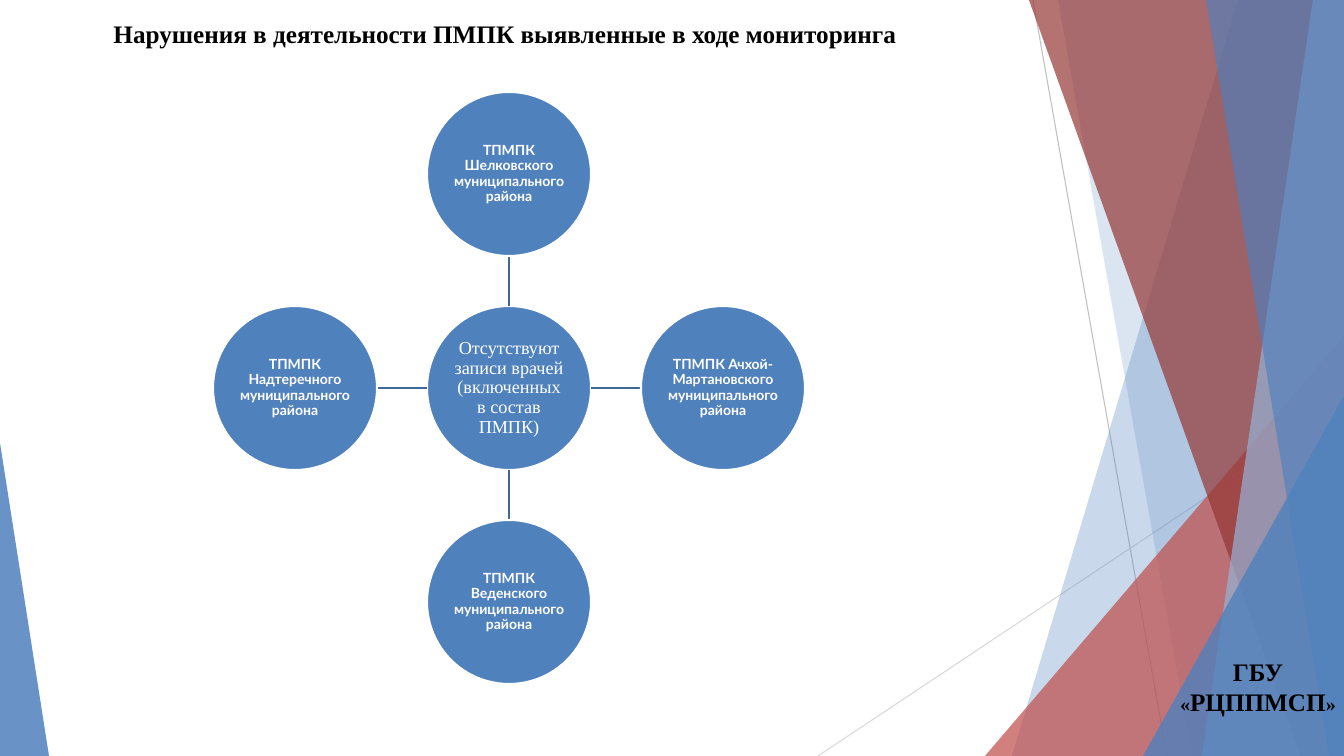
"""Build a slide with a hub of four districts around one monitoring finding."""
from lxml.etree import SubElement
from pptx import Presentation
from pptx.dml.color import RGBColor
from pptx.enum.shapes import MSO_CONNECTOR, MSO_SHAPE
from pptx.enum.text import MSO_ANCHOR, MSO_AUTO_SIZE, PP_ALIGN
from pptx.oxml.ns import qn
from pptx.util import Pt

TITLE = "Нарушения в деятельности ПМПК выявленные в ходе мониторинга"
CENTRE_NAME = "ГБУ «РЦППМСП»"
FINDING = "Отсутствуют записи врачей (включенных в состав ПМПК)"
DISTRICTS = [
    ("ТПМПК Шелковского муниципального района", (0, -1)),
    ("ТПМПК Ачхой-Мартановского муниципального района", (1, 0)),
    ("ТПМПК Веденского муниципального района", (0, 1)),
    ("ТПМПК Надтеречного муниципального района", (-1, 0)),
]
COLOURS = {
    "blue": "4F81BD", "pale blue": "95B3D7", "red": "C0504D", "dark red": "953735",
    "spoke": "3F6797", "grey": "BFBFBF", "light grey": "D9D9D9",
    "white": "FFFFFF", "black": "000000",
}
THIN_LINES = [
    ((1033, 0), (1167, 756), "grey"),
    ((1344, 406), (818, 756), "light grey"),
]
# Bands hold top and bottom x; triangles hold left, top, width and apex.
DECORATION = [
    ("band", (1238, 1012), "blue", 30),
    ("band", (1058, 1192), "blue", 20),
    ("triangle", (985, 336, 359, 1), "red", 72),
    ("band", (1029, 1301), "dark red", 70),
    ("band", (1313, 1202), "pale blue", 70),
    ("band", (1206, 1329), "blue", 65),
    ("triangle", (1143, 396, 201, 1), "blue", 80),
    ("triangle", (0, 443, 49, 0), "blue", 85),
]
WIDTH, HEIGHT = 1344, 756
HUB_X, HUB_Y, RADIUS, SPACING = 509, 388, 82, 214
SERIF, SANS = "Times New Roman", "Lato"
SCALE = 914400 / 100.8


def px(length):
    return round(length * SCALE)


def colour(name):
    return RGBColor.from_string(COLOURS[name])


def place(shape, left, top, width, height):
    shape.left, shape.top = px(left), px(top)
    shape.width, shape.height = px(width), px(height)


def write(shape, text, size, font, ink, bold, anchor, spacing, inset=0):
    frame = shape.text_frame
    frame.text = text
    frame.word_wrap = True
    frame.auto_size = MSO_AUTO_SIZE.NONE
    frame.vertical_anchor = anchor
    frame.margin_left = frame.margin_right = px(inset)
    frame.margin_top = frame.margin_bottom = px(inset)
    paragraph = frame.paragraphs[0]
    paragraph.alignment = PP_ALIGN.CENTER
    paragraph.line_spacing = spacing
    run = paragraph.runs[0]
    run.font.size, run.font.name, run.font.bold = Pt(size), font, bold
    run.font.color.rgb = colour(ink)
    return run


def add_line(shapes, start, end, ink, weight):
    points = [px(value) for value in (*start, *end)]
    line = shapes.add_connector(MSO_CONNECTOR.STRAIGHT, *points)
    line.line.color.rgb = colour(ink)
    line.line.width = Pt(weight)
    SubElement(line._element.spPr, qn("a:effectLst"))


def add_decoration(shapes, kind, geometry, fill, opacity):
    if kind == "band":
        top_x, bottom_x = geometry
        builder = shapes.build_freeform(top_x, 0, scale=SCALE)
        builder.add_line_segments([(WIDTH, 0), (WIDTH, HEIGHT), (bottom_x, HEIGHT)])
        shape = builder.convert_to_shape()
    else:
        left, top, width, apex = geometry
        shape = shapes.add_shape(MSO_SHAPE.ISOSCELES_TRIANGLE, 0, 0, 0, 0)
        place(shape, left, top, width, HEIGHT - top)
        shape.adjustments[0] = apex
    shape.shadow.inherit = False
    shape.line.fill.background()
    shape.fill.solid()
    shape.fill.fore_color.rgb = colour(fill)
    tint = shape._element.spPr.find(".//" + qn("a:srgbClr"))
    SubElement(tint, qn("a:alpha")).set("val", str(opacity * 1000))


def add_circle(shapes, x, y, text, size, font, bold):
    circle = shapes.add_shape(MSO_SHAPE.OVAL, 0, 0, 0, 0)
    place(circle, x - RADIUS, y - RADIUS, 2 * RADIUS, 2 * RADIUS)
    circle.shadow.inherit = False
    circle.fill.solid()
    circle.fill.fore_color.rgb = colour("blue")
    circle.line.color.rgb = colour("white")
    circle.line.width = Pt(1.5)
    write(circle, text, size, font, "white", bold, MSO_ANCHOR.MIDDLE, 0.9, inset=1)


def main():
    presentation = Presentation()
    presentation.slide_width, presentation.slide_height = px(WIDTH), px(HEIGHT)
    slide = presentation.slides.add_slide(presentation.slide_layouts[5])
    shapes = slide.shapes

    for start, end, ink in THIN_LINES:
        add_line(shapes, start, end, ink, 0.75)
    for item in DECORATION:
        add_decoration(shapes, *item)

    title = shapes.title
    place(title, 96, 16, 818, 41)
    write(title, TITLE, 18, SERIF, "black", True, MSO_ANCHOR.TOP, 1.07)

    label = shapes.add_textbox(0, 0, 0, 0)
    place(label, 1172, 656, 172, 62)
    run = write(label, CENTRE_NAME, 18, SERIF, "black", True, MSO_ANCHOR.TOP, 1)
    run._r.get_or_add_rPr().set("cap", "small")

    add_circle(shapes, HUB_X, HUB_Y, FINDING, 13, SERIF, False)
    for district, (across, down) in DISTRICTS:
        start, end = [
            (HUB_X + across * reach, HUB_Y + down * reach)
            for reach in (RADIUS, SPACING - RADIUS)
        ]
        add_line(shapes, start, end, "spoke", 1.5)
        x, y = HUB_X + across * SPACING, HUB_Y + down * SPACING
        add_circle(shapes, x, y, district, 10, SANS, True)

    presentation.save("out.pptx")


if __name__ == "__main__":
    main()
